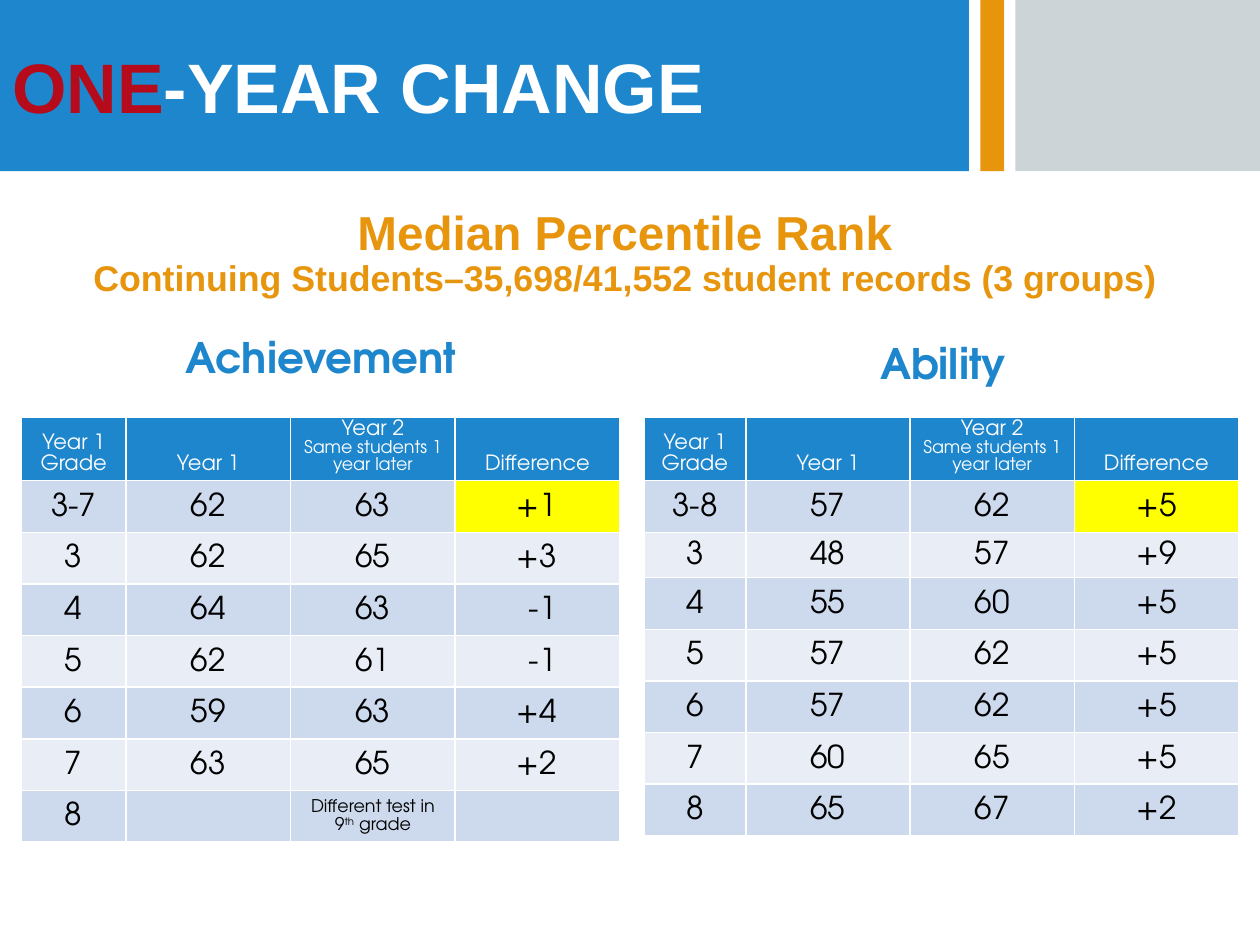
from lxml import etree
from pptx import Presentation
from pptx.dml.color import RGBColor
from pptx.enum.shapes import MSO_SHAPE
from pptx.enum.text import MSO_ANCHOR, PP_ALIGN
from pptx.oxml.ns import qn
from pptx.util import Inches, Pt

COLORS = {
    "blue": "1D86CD", "orange": "E8950E", "gray": "CDD4D7", "red": "B50B1B",
    "white": "FFFFFF", "black": "000000", "yellow": "FFFF00",
    "dark band": "CDD9ED", "light band": "E8EDF6",
}
HEADING_FONT = "Arial"
TABLE_FONT = "TeX Gyre Adventor"


def add_run(paragraph, text, size, color, font=TABLE_FONT, bold=False):
    run = paragraph.add_run()
    run.text = text
    run.font.size = Pt(size)
    run.font.name = font
    run.font.bold = bold
    run.font.color.rgb = RGBColor.from_string(COLORS[color])
    return run


def style_cell(cell, fill, anchor):
    """Give the cell thin white borders, a fill and a vertical anchor."""
    properties = cell._tc.get_or_add_tcPr()
    for side in ("a:lnL", "a:lnR", "a:lnT", "a:lnB"):
        border = etree.SubElement(properties, qn(side), w=str(Pt(1)))
        border_fill = etree.SubElement(border, qn("a:solidFill"))
        etree.SubElement(border_fill, qn("a:srgbClr"), val=COLORS["white"])
    cell.fill.solid()
    cell.fill.fore_color.rgb = RGBColor.from_string(COLORS[fill])
    cell.vertical_anchor = anchor


prs = Presentation()
prs.slide_width, prs.slide_height = Inches(10), Inches(7.5)
slide = prs.slides.add_slide(prs.slide_layouts[6])

# Banner; the last band holds the title
for left, width, color in [(8.06, 1.94, "gray"), (7.78, 0.19, "orange"), (0, 7.69, "blue")]:
    band = slide.shapes.add_shape(
        MSO_SHAPE.RECTANGLE, Inches(left), 0, Inches(width), Inches(1.36))
    band.shadow.inherit = False
    band.fill.solid()
    band.fill.fore_color.rgb = RGBColor.from_string(COLORS[color])
    band.line.fill.background()

title = band.text_frame
title.margin_top = title.margin_bottom = 0
title.vertical_anchor = MSO_ANCHOR.MIDDLE
title.paragraphs[0].alignment = PP_ALIGN.LEFT
add_run(title.paragraphs[0], "ONE", 40, "red", HEADING_FONT, True)
add_run(title.paragraphs[0], "-YEAR CHANGE", 40, "white", HEADING_FONT, True)

subtitle = slide.shapes.add_textbox(
    Inches(0.4), Inches(1.61), Inches(9.12), Inches(0.93)).text_frame
subtitle.word_wrap = True
rank_line = subtitle.paragraphs[0]
rank_line.alignment = PP_ALIGN.CENTER
rank_line.line_spacing = 0.9
add_run(rank_line, "Median Percentile Rank", 27.2, "orange", HEADING_FONT, True)
rank_line.add_line_break()
add_run(rank_line, "Continuing Students–35,698/41,552 student records (3 groups)",
        20.4, "orange", HEADING_FONT, True)

# Each header is a list of paragraphs: text and size
headers = [
    [("Year 1", 12), ("Grade", 12)],
    [("Year 1", 12)],
    [("Year 2", 12), ("Same students 1 year later", 10)],
    [("Difference", 12)],
]
achievement = [
    ("3-7", "62", "63", "+1"), ("3", "62", "65", "+3"), ("4", "64", "63", "-1"),
    ("5", "62", "61", "-1"), ("6", "59", "63", "+4"), ("7", "63", "65", "+2"),
    ("8", "", "", ""),
]
ability = [
    ("3-8", "57", "62", "+5"), ("3", "48", "57", "+9"), ("4", "55", "60", "+5"),
    ("5", "57", "62", "+5"), ("6", "57", "62", "+5"), ("7", "60", "65", "+5"),
    ("8", "65", "67", "+2"),
]
# Name, left, heading top, table width, grade column width, height of the
# grade 3 row, whether differences align right, scores
measures = [
    ("Achievement", 0.17, 2.58, 4.75, 0.83, 0.41, True, achievement),
    ("Ability", 5.11, 2.63, 4.72, 0.81, 0.36, False, ability),
]
score_tables = {}
for (name, left, heading_top, table_width, grade_width, grade_3_height,
     align_right, scores) in measures:
    widths = [grade_width] + [(table_width - grade_width) / 3] * 3
    heights = [0.5, 0.41, grade_3_height] + [0.41] * 5
    table = slide.shapes.add_table(
        len(heights), len(widths), Inches(left), Inches(3.31),
        Inches(table_width), Inches(sum(heights))).table
    score_tables[name] = table
    for column, width in zip(table.columns, widths):
        column.width = Inches(width)
    for row, height in zip(table.rows, heights):
        row.height = Inches(height)

    for cell, lines in zip(table.rows[0].cells, headers):
        style_cell(cell, "blue", MSO_ANCHOR.BOTTOM)
        cell.margin_top = Inches(0.01)
        for i, (text, size) in enumerate(lines):
            paragraph = cell.text_frame.add_paragraph() if i else cell.text_frame.paragraphs[0]
            paragraph.alignment = PP_ALIGN.CENTER
            paragraph.line_spacing = Pt(size)
            add_run(paragraph, text, size, "white")

    for r, values in enumerate(scores, 1):
        for c, value in enumerate(values):
            cell = table.cell(r, c)
            band_color = "dark band" if r % 2 else "light band"
            style_cell(cell, "yellow" if (r, c) == (1, 3) else band_color, MSO_ANCHOR.MIDDLE)
            paragraph = cell.text_frame.paragraphs[0]
            paragraph.alignment = PP_ALIGN.CENTER
            paragraph.line_spacing = Pt(18)
            if c == 3 and align_right:
                paragraph.alignment = PP_ALIGN.RIGHT
                cell.margin_right = Inches(0.5)
            if value:
                add_run(paragraph, value, 18, "black")

    heading = slide.shapes.add_textbox(
        Inches(left), Inches(heading_top), Inches(4.75), Inches(0.5)).text_frame
    heading.word_wrap = True
    heading.paragraphs[0].alignment = PP_ALIGN.CENTER
    add_run(heading.paragraphs[0], name, 24, "blue", bold=True)

test_note = score_tables["Achievement"].cell(7, 2).text_frame.paragraphs[0]
test_note.line_spacing = Pt(10)
add_run(test_note, "Different test in 9", 10, "black")
ordinal = add_run(test_note, "th", 10, "black")
ordinal.font._element.set("baseline", "30000")
add_run(test_note, " grade", 10, "black")

prs.save("out.pptx")
